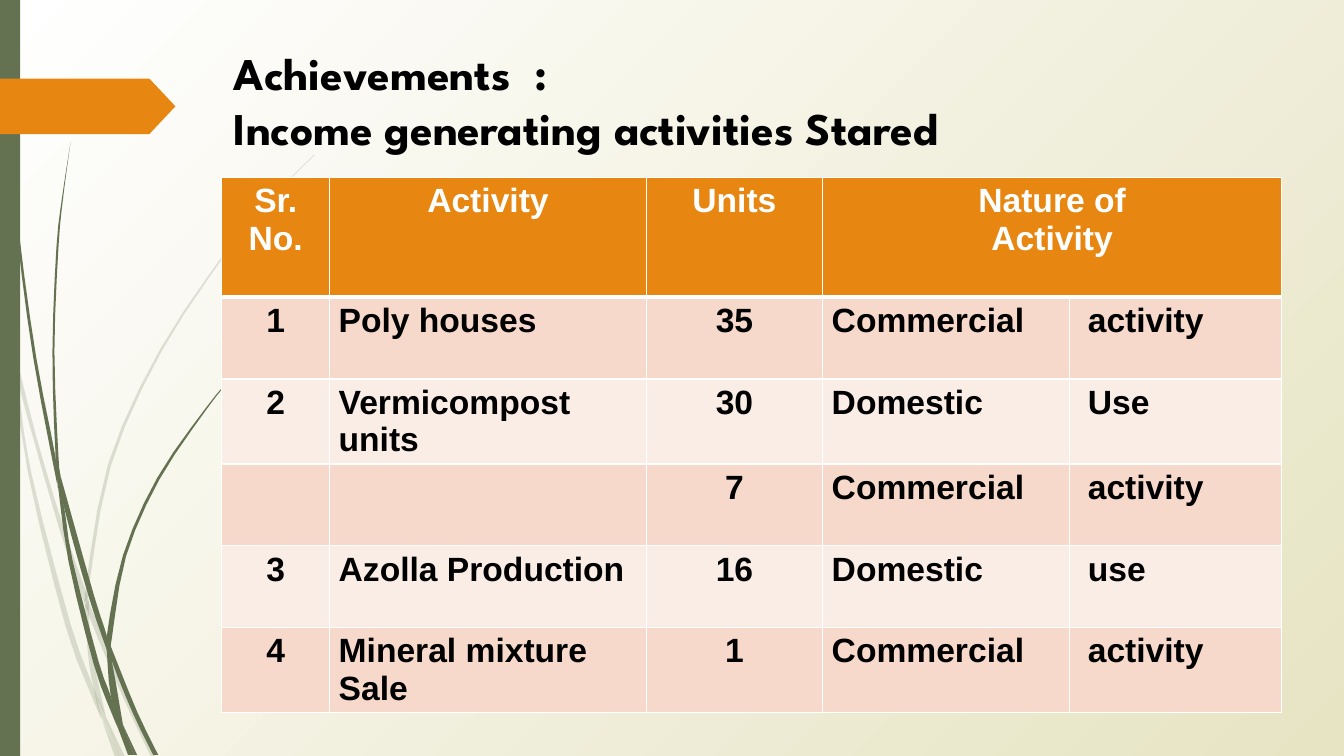
from dataclasses import dataclass

from lxml import etree
from pptx import Presentation
from pptx import util as u
from pptx.dml.color import RGBColor
from pptx.enum import shapes, text
from pptx.oxml import ns

PX = 9144  # EMU in one px, 100 px to the inch
COLOURS = {
    "white": "FFFFFF",
    "sand": "E6E4C3",
    "green": "647252",
    "orange": "E78712",
    "rose": "F6D9CA",
    "blush": "FAEDE6",
    "black": "000000",
}
Point = tuple[float, float]


@dataclass
class Blade:
    """One piece of a grass stem, between its left and right edges."""
    left: list[Point]
    right: list[Point]


@dataclass
class Column:
    width: int
    centred: bool = False
    inset: int = 9


PALE_BLADES = [
    Blade([(0, 299), (10, 344), (11, 350)], [(0, 282), (9, 322), (11, 350)]),
    Blade([(14, 345), (17, 376), (58, 522), (84, 599)], [(14, 345), (36, 433), (62, 520), (85, 586)]),
    Blade([(88, 596), (88, 610), (123, 694), (150, 751)], [(88, 596), (92, 607), (127, 692), (155, 751)]),
    Blade([(105, 711), (119, 751)], [(105, 711), (124, 751)]),
    Blade([(11, 350), (28, 470), (65, 621), (92, 693), (101, 714)],
          [(11, 350), (17, 376), (31, 469), (70, 619), (93, 683), (101, 714)]),
    Blade([(84, 599), (87, 646), (93, 683), (105, 711)], [(84, 599), (88, 608), (91, 646), (105, 711)]),
    Blade([(312, 153), (268, 197), (228, 244), (158, 348), (107, 461), (85, 584), (88, 596)],
          [(312, 154), (268, 198), (229, 245), (160, 349), (110, 462), (88, 584), (88, 596)]),
    Blade([(101, 714), (114, 751)], [(101, 714), (119, 751)]),
    Blade([(85, 586), (84, 599), (88, 608)], [(85, 586), (88, 596), (88, 610)]),
    Blade([(93, 683), (99, 707), (119, 751)], [(93, 683), (105, 711), (119, 751)]),
]
DARK_BLADES = [
    Blade([(3, 0), (4, 48), (7, 110), (17, 233), (33, 355), (56, 477), (57, 481)],
          [(4, 0), (5, 48), (8, 109), (19, 232), (36, 355), (55, 453), (57, 481)]),
    Blade([(60, 472), (64, 505), (88, 592), (106, 645)], [(60, 472), (93, 590), (106, 631), (106, 645)]),
    Blade([(110, 641), (111, 656), (132, 708), (152, 749)], [(110, 641), (113, 649), (136, 706), (157, 749)]),
    Blade([(57, 477), (68, 557), (93, 659), (111, 708), (117, 722)],
          [(57, 477), (64, 505), (72, 556), (98, 657), (110, 691), (117, 722)]),
    Blade([(70, 141), (62, 193), (56, 245), (52, 349), (55, 449), (60, 472)],
          [(70, 141), (63, 193), (58, 245), (54, 349), (58, 453), (60, 472)]),
    Blade([(122, 719), (133, 749)], [(122, 719), (136, 749)]),
    Blade([(55, 449), (57, 477), (64, 505)], [(55, 449), (60, 472), (64, 505)]),
    Blade([(260, 344), (231, 373), (204, 405), (156, 474), (122, 551), (106, 631), (110, 641)],
          [(260, 344), (231, 374), (205, 406), (158, 476), (125, 552), (111, 633), (110, 641)]),
    Blade([(117, 722), (127, 749)], [(117, 722), (131, 749)]),
    Blade([(106, 645), (110, 691), (122, 719)], [(106, 645), (111, 656), (122, 719)]),
    Blade([(106, 631), (106, 645), (111, 656)], [(106, 631), (110, 641), (111, 656)]),
    Blade([(110, 691), (117, 722), (130, 749)], [(110, 691), (122, 719), (133, 749)]),
]

COLUMNS = [Column(107, True), Column(314), Column(175, True), Column(245), Column(210, inset=18)]
ROW_HEIGHTS = [119, 81, 82, 81, 81, 82]
ACTIVITIES = [
    ("Sr. No.", "Activity", "Units", "Nature of\nActivity", ""),
    ("1", "Poly houses", "35", "Commercial", "activity"),
    ("2", "Vermicompost units", "30", "Domestic", "Use"),
    ("", "", "7", "Commercial", "activity"),
    ("3", "Azolla Production", "16", "Domestic", "use"),
    ("4", "Mineral mixture Sale", "1", "Commercial", "activity"),
]


def px(length: float) -> int:
    return round(length * PX)


def colour(name: str) -> RGBColor:
    return RGBColor.from_string(COLOURS[name])


def paint(item, name: str, opacity: int = 100) -> None:
    item.shadow.inherit = False
    item.fill.solid()
    item.fill.fore_color.rgb = colour(name)
    item.line.fill.background()
    if opacity < 100:
        tint = item.fill._xPr.find(".//" + ns.qn("a:srgbClr"))
        etree.SubElement(tint, ns.qn("a:alpha"), val=str(opacity * 1000))


def style_text(frame, size: float, font: str, name: str) -> None:
    for paragraph in frame.paragraphs:
        for run in paragraph.runs:
            run.font.size = u.Pt(size)
            run.font.name = font
            run.font.bold = True
            run.font.color.rgb = colour(name)


def smooth(knots: list[Point], steps: int = 3) -> list[Point]:
    """Return points of the Catmull-Rom curve through the knots."""
    if len(knots) < 3:
        return knots
    padded = [knots[0], *knots, knots[-1]]
    curve = []
    for a, b, c, d in zip(padded, padded[1:], padded[2:], padded[3:]):
        for step in range(steps):
            t = step / steps
            x, y = (
                (2 * q + (r - p) * t + (2 * p - 5 * q + 4 * r - s) * t**2
                 + (3 * q - p - 3 * r + s) * t**3) / 2
                for p, q, r, s in zip(a, b, c, d)
            )
            curve.append((x, y))
    return curve + [knots[-1]]


def draw_background(slide) -> None:
    fill = slide.background.fill
    fill.gradient()
    for position, (stop, name) in enumerate(zip(fill.gradient_stops, ("white", "sand"))):
        stop.color.rgb = colour(name)
        stop.position = position
    gradient = slide.background._cSld.find(".//" + ns.qn("a:gradFill"))
    gradient.remove(gradient.find(ns.qn("a:lin")))
    circle = etree.SubElement(gradient, ns.qn("a:path"), {"path": "circle"})
    etree.SubElement(circle, ns.qn("a:fillToRect"), r="100000", b="100000")


def draw_blade(slide, blade: Blade, opacity: int) -> None:
    edge = [(px(x), px(y)) for x, y in smooth(blade.left) + smooth(blade.right)[::-1]]
    builder = slide.shapes.build_freeform(*edge[0])
    builder.add_line_segments(edge[1:])
    paint(builder.convert_to_shape(), "green", opacity)


def draw_margin(slide) -> None:
    for blades, opacity in ((PALE_BLADES, 20), (DARK_BLADES, 100)):
        for blade in blades:
            draw_blade(slide, blade, opacity)
    band = slide.shapes.add_shape(shapes.MSO_SHAPE.RECTANGLE, 0, 0, px(20), px(750))
    paint(band, "green")
    pointer = slide.shapes.add_shape(shapes.MSO_SHAPE.PENTAGON, 0, px(78), px(174), px(55))
    pointer.adjustments[0] = 0.47
    paint(pointer, "orange")


def write_title(slide) -> None:
    title = slide.shapes.title
    title.left, title.top, title.width, title.height = px(222), px(40), px(1063), px(115)
    frame = title.text_frame
    frame.text = "Achievements  :\vIncome generating activities Stared"
    frame.vertical_anchor = text.MSO_ANCHOR.TOP
    frame.paragraphs[0].alignment = text.PP_ALIGN.LEFT
    style_text(frame, 32.4, "League Spartan", "black")


def rule_cell(cell, top: int, bottom: int) -> None:
    """Draw white borders, with top and bottom widths in points."""
    properties = cell._tc.get_or_add_tcPr()
    for index, (side, width) in enumerate((("L", 1), ("R", 1), ("T", top), ("B", bottom))):
        line = etree.Element(ns.qn(f"a:ln{side}"), w=str(u.Pt(width)))
        fill = etree.SubElement(line, ns.qn("a:solidFill"))
        etree.SubElement(fill, ns.qn("a:srgbClr"), val=COLOURS["white"])
        properties.insert(index, line)


def draw_activities(slide) -> None:
    table = slide.shapes.add_table(
        len(ACTIVITIES), len(COLUMNS), px(220), px(176),
        px(sum(column.width for column in COLUMNS)), px(sum(ROW_HEIGHTS)),
    ).table
    for grid_column, column in zip(table.columns, COLUMNS):
        grid_column.width = px(column.width)
    table.cell(0, 3).merge(table.cell(0, 4))
    for r, (values, height) in enumerate(zip(ACTIVITIES, ROW_HEIGHTS)):
        table.rows[r].height = px(height)
        header = r == 0
        shade = "orange" if header else ("blush", "rose")[r % 2]
        for c, (value, column) in enumerate(zip(values, COLUMNS)):
            cell = table.cell(r, c)
            cell.fill.solid()
            cell.fill.fore_color.rgb = colour(shade)
            rule_cell(cell, top=3 if r == 1 else 1, bottom=3 if header else 1)
            if not value:
                continue
            cell.margin_left, cell.margin_right = px(column.inset), px(9)
            cell.text_frame.text = value
            for paragraph in cell.text_frame.paragraphs:
                centred = header or column.centred
                paragraph.alignment = text.PP_ALIGN.CENTER if centred else text.PP_ALIGN.LEFT
            style_text(cell.text_frame, 24, "Arial", "white" if header else "black")


def main() -> None:
    deck = Presentation()
    deck.slide_width, deck.slide_height = px(1333), px(750)
    slide = deck.slides.add_slide(deck.slide_layouts[5])
    draw_background(slide)
    draw_margin(slide)
    write_title(slide)
    draw_activities(slide)
    deck.save("out.pptx")


if __name__ == "__main__":
    main()
